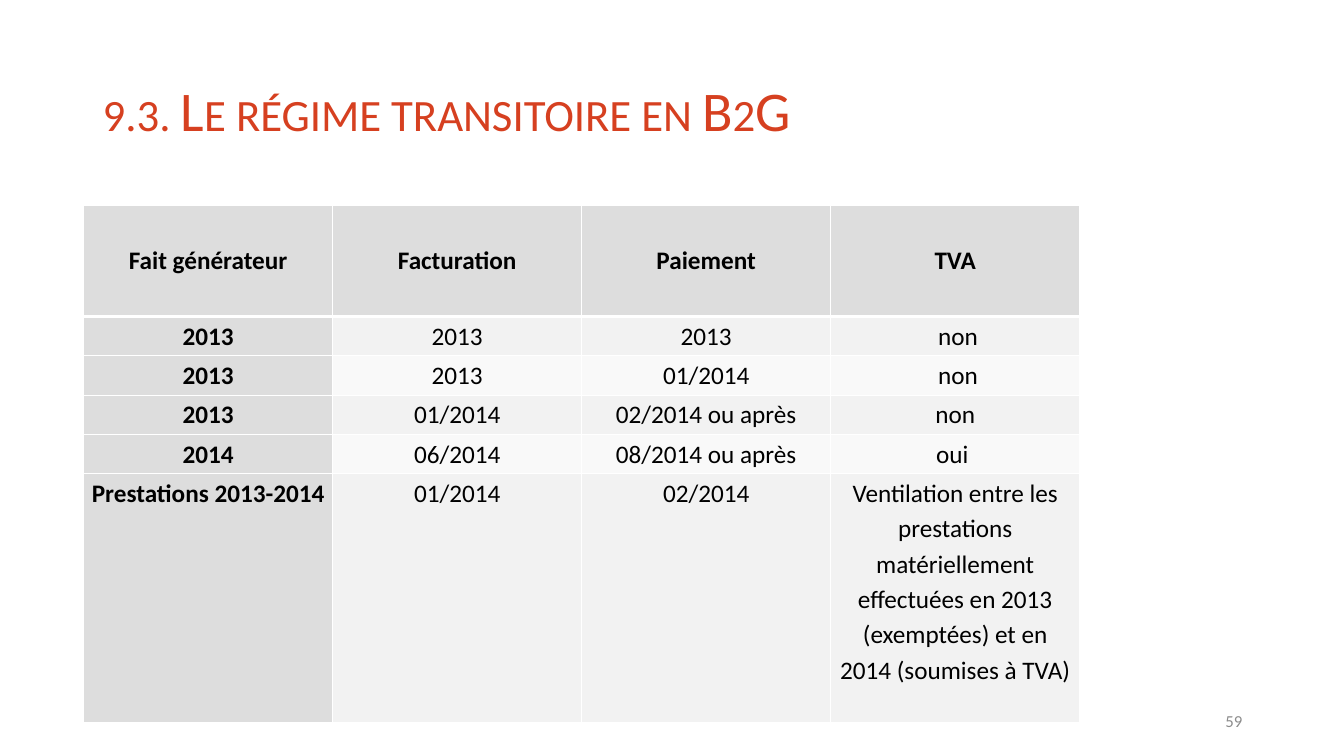
from lxml.etree import SubElement
from pptx import Presentation
from pptx.dml.color import RGBColor
from pptx.enum.text import MSO_ANCHOR, PP_ALIGN
from pptx.oxml.ns import qn
from pptx.util import Inches, Pt

TITLE = "9.3. Le régime transitoire en B2G"
PAGE = "59"
ROWS = [
    ("Fait générateur", "Facturation", "Paiement", "TVA"),
    ("2013", "2013", "2013", " non"),
    ("2013", "2013", "01/2014", " non"),
    ("2013", "01/2014", "02/2014 ou après", "non"),
    ("2014", "06/2014", "08/2014 ou après", "oui "),
    ("Prestations 2013-2014", "01/2014", "02/2014",
     "Ventilation entre les prestations matériellement effectuées en 2013 "
     "(exemptées) et en 2014 (soumises à TVA)"),
]
COLORS = {"title": "D64020", "page": "8C8C8C", "text": "000000", "line": "FFFFFF",
          "head": "DDDDDD", "odd": "F2F2F2", "even": "F9F9F9"}
FONT = "Calibri"
SLIDE_W, SLIDE_H = 13.33, 7.5
LEFT, TOP, COL_W = 0.83, 2.04, 2.47
HEAD_H, ROW_H, LAST_H = 1.1, 0.39, 2.47
LINE_H = 0.35


def color(name):
    return RGBColor.from_string(COLORS[name])


def write(tf, text, size, tone, align, spacing=1.0, bold=False):
    p = tf.paragraphs[0]
    p.alignment, p.line_spacing = align, spacing
    r = p.add_run()
    r.text = text
    for name, value in {"name": FONT, "size": Pt(size), "bold": bold}.items():
        setattr(r.font, name, value)
    r.font.color.rgb = color(tone)
    return r


def add_text(s, box, *args, **kwargs):
    tf = s.shapes.add_textbox(*map(Inches, box)).text_frame
    tf.word_wrap, tf.vertical_anchor = True, MSO_ANCHOR.MIDDLE
    return write(tf, *args, **kwargs)


def add_borders(cell, widths):
    tcPr = cell._tc.get_or_add_tcPr()
    for side, width in zip("LRTB", widths):
        ln = SubElement(tcPr, qn(f"a:ln{side}"), w=str(Pt(width)))
        fill = SubElement(ln, qn("a:solidFill"))
        SubElement(fill, qn("a:srgbClr"), val=COLORS["line"])


def fill_cell(cell, text, row, col):
    is_head = row == 0 or col == 0
    margins = {"margin_left": 0.07, "margin_right": 0.07,
               "margin_top": LINE_H if row == 0 else 0, "margin_bottom": 0}
    for name, value in margins.items():
        setattr(cell, name, Inches(value))
    add_borders(cell, (1, 1, 3 if row == 1 else 1, 3 if row == 0 else 1))
    cell.fill.solid()
    cell.fill.fore_color.rgb = color("head" if is_head else "odd" if row % 2 else "even")
    write(cell.text_frame, text, 18, "text", PP_ALIGN.CENTER, 1.15, is_head)


def add_schedule(s):
    heights = [HEAD_H] + [ROW_H] * (len(ROWS) - 2) + [LAST_H]
    cols = len(ROWS[0])
    box = (LEFT, TOP, COL_W * cols, sum(heights))
    table = s.shapes.add_table(len(ROWS), cols, *map(Inches, box)).table
    for column in table.columns:
        column.width = Inches(COL_W)
    for i, (height, texts) in enumerate(zip(heights, ROWS)):
        table.rows[i].height = Inches(height)
        for j, text in enumerate(texts):
            fill_cell(table.cell(i, j), text, i, j)


def main():
    prs = Presentation()
    prs.slide_width, prs.slide_height = Inches(SLIDE_W), Inches(SLIDE_H)
    s = prs.slides.add_slide(prs.slide_layouts[6])
    r = add_text(s, (0.92, 0.4, 11.5, 1.45), TITLE, 40, "title", PP_ALIGN.LEFT, 0.9)
    r.font._element.set("cap", "small")
    add_text(s, (9.42, 6.95, 3, 0.4), PAGE, 12, "page", PP_ALIGN.RIGHT)
    add_schedule(s)
    prs.save("out.pptx")


if __name__ == "__main__":
    main()
